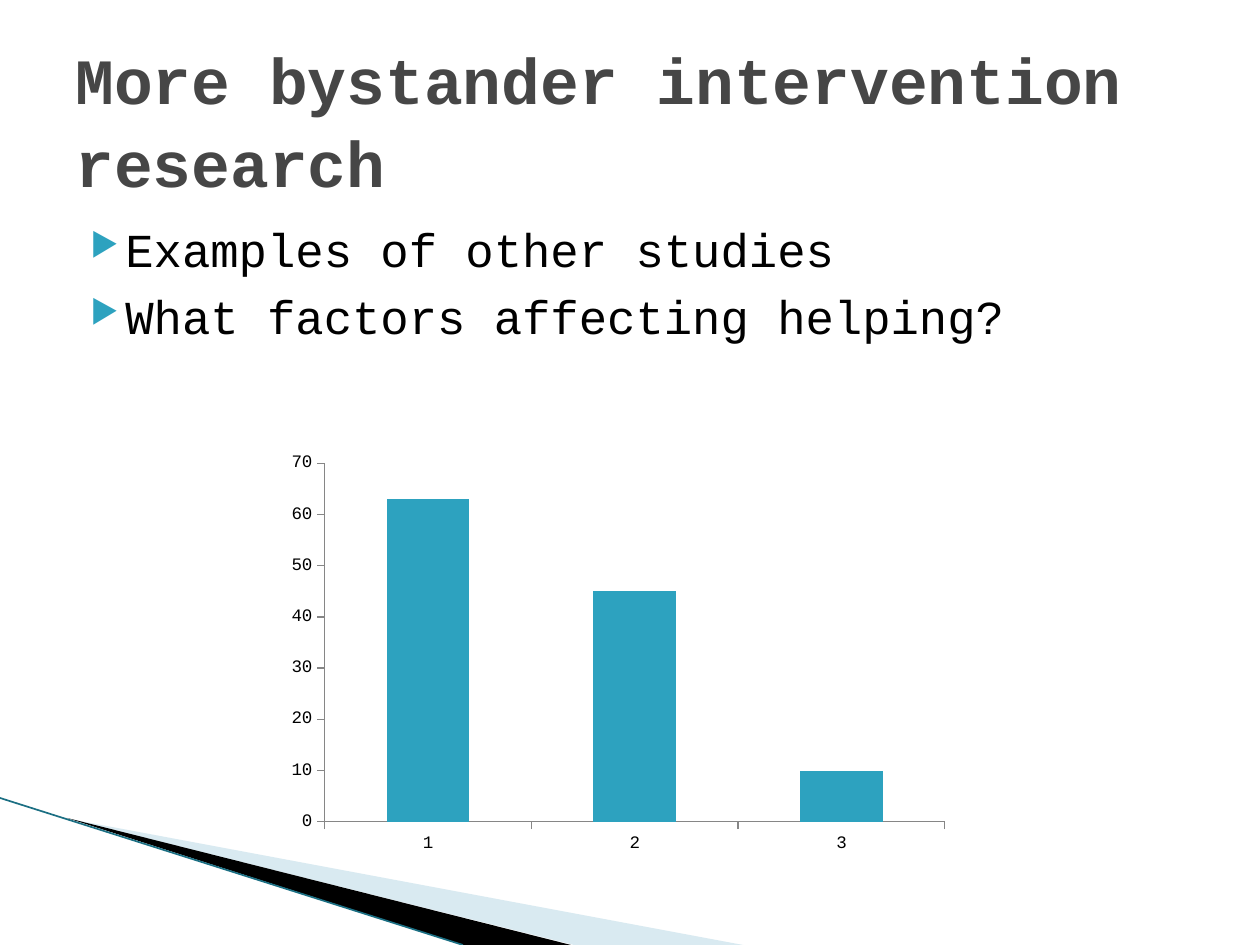
from lxml import etree
from pptx import Presentation
from pptx.chart.data import CategoryChartData
from pptx.dml.color import RGBColor
from pptx.enum.chart import XL_CHART_TYPE, XL_TICK_MARK
from pptx.enum.shapes import MSO_CONNECTOR
from pptx.enum.text import MSO_ANCHOR
from pptx.oxml import parse_xml
from pptx.oxml.ns import qn
from pptx.util import Pt

COLUMNS = XL_CHART_TYPE.COLUMN_CLUSTERED
STRAIGHT = MSO_CONNECTOR.STRAIGHT
MIDDLE, TOP = MSO_ANCHOR.MIDDLE, MSO_ANCHOR.TOP
OUTSIDE = XL_TICK_MARK.OUTSIDE
SCALE = 914400 / 126
FONT = "Courier New"
TEAL, BLACK, AXIS_GRAY = "2DA2BF", "000000", "868686"


def px(length):
    """Turn a length in px into EMU."""
    return round(length * SCALE)


def color(value):
    """Turn a hex string into a colour."""
    return RGBColor.from_string(value)


def set_font(font, size, value, bold=False):
    """Set the typeface, size, colour and weight of a font."""
    font.name, font.size, font.bold = FONT, Pt(size), bold
    font.color.rgb = color(value)


def add_wedge(slide, points, fill, opacity=100):
    """Draw a filled polygon through the points."""
    builder = slide.shapes.build_freeform(*points[0], scale=SCALE)
    builder.add_line_segments(points[1:], close=True)
    wedge = builder.convert_to_shape()
    wedge.shadow.inherit = False
    wedge.fill.solid()
    wedge.fill.fore_color.rgb = color(fill)
    wedge.line.fill.background()
    if opacity < 100:
        tint = wedge.fill._xPr.find(".//" + qn("a:srgbClr"))
        etree.SubElement(tint, qn("a:alpha"), val=str(opacity * 1000))


def add_edge(slide, start, end, value, width):
    """Draw a straight line without a shadow."""
    edge = slide.shapes.add_connector(
        STRAIGHT, *(px(length) for length in (*start, *end)))
    edge.line.color.rgb = color(value)
    edge.line.width = Pt(width)
    etree.SubElement(edge._element.spPr, qn("a:effectLst"))


def add_text(slide, box, lines, anchor):
    """Add a wrapping text box and return its frame."""
    frame = slide.shapes.add_textbox(*map(px, box)).text_frame
    frame.word_wrap = True
    frame.vertical_anchor = anchor
    frame.text = "\n".join(lines)
    return frame


def add_bullet(paragraph):
    """Give a paragraph a teal triangle and a hanging indent."""
    properties = paragraph._p.get_or_add_pPr()
    properties.set("marL", str(px(50)))
    properties.set("indent", str(px(-35)))
    namespace = 'xmlns:a="http://schemas.openxmlformats.org/drawingml/2006/main"'
    for element in (
        f'<a:buClr {namespace}><a:srgbClr val="{TEAL}"/></a:buClr>',
        f'<a:buSzPct {namespace} val="68000"/>',
        f'<a:buChar {namespace} char="▶"/>',
    ):
        properties.append(parse_xml(element))


def add_title(slide, title):
    """Add the slide title."""
    heading = add_text(slide, (63, 38, 1134, 158), [title], MIDDLE).paragraphs[0]
    heading.line_spacing = 1.07
    set_font(heading.runs[0].font, 36.9, "464646", bold=True)


def add_points(slide, points):
    """Add the bulleted points."""
    frame = add_text(slide, (63, 214, 1134, 614), points, TOP)
    for index, point in enumerate(frame.paragraphs):
        add_bullet(point)
        if index:
            point.space_before = Pt(6)
        set_font(point.runs[0].font, 27, BLACK)


def set_plot_area(chart, **fractions):
    """Fix the inner plot area as fractions of the chart."""
    plot_area = chart._chartSpace.chart.plotArea
    for layout in plot_area.findall(qn("c:layout")):
        plot_area.remove(layout)
    layout = etree.Element(qn("c:layout"))
    manual = etree.SubElement(layout, qn("c:manualLayout"))
    settings = {"layoutTarget": "inner", "xMode": "edge", "yMode": "edge", **fractions}
    for tag, value in settings.items():
        etree.SubElement(manual, qn(f"c:{tag}"), val=str(value))
    plot_area.insert(0, layout)


def add_column_chart(slide, box, categories, values):
    """Add the column chart with plain axes."""
    data = CategoryChartData()
    data.categories = categories
    data.add_series("Series 1", values)
    chart = slide.shapes.add_chart(COLUMNS, *map(px, box), data).chart
    chart.has_legend = chart.has_title = False
    set_font(chart.font, 10, BLACK)
    set_plot_area(chart, x=0.06, y=0.075, w=0.895, h=0.832)
    plot = chart.plots[0]
    plot.gap_width = 150
    plot.vary_by_categories = False
    columns = plot.series[0].format.fill
    columns.solid()
    columns.fore_color.rgb = color(TEAL)
    for axis in (chart.category_axis, chart.value_axis):
        axis.has_major_gridlines = False
        axis.major_tick_mark = OUTSIDE
        axis.format.line.color.rgb = color(AXIS_GRAY)
        axis.format.line.width = Pt(0.75)
    chart.value_axis.minimum_scale = 0
    chart.value_axis.maximum_scale = 70
    chart.value_axis.major_unit = 10


def main():
    """Build the slide and save it."""
    deck = Presentation()
    deck.slide_width, deck.slide_height = px(1260), px(945)
    slide = deck.slides.add_slide(deck.slide_layouts[6])
    add_wedge(slide, [(69, 819), (743, 945), (574, 945)], "A0CBDC", opacity=40)
    add_wedge(slide, [(67, 818), (571, 945), (463, 945)], BLACK)
    add_edge(slide, (0, 798), (463, 945), "1B6F83", 0.95)
    add_points(slide, ["Examples of other studies", "What factors affecting helping?"])
    add_title(slide, "More bystander intervention research")
    add_column_chart(slide, (283, 431, 693, 431), ["1", "2", "3"], (63, 45, 10))
    deck.save("out.pptx")


if __name__ == "__main__":
    main()
